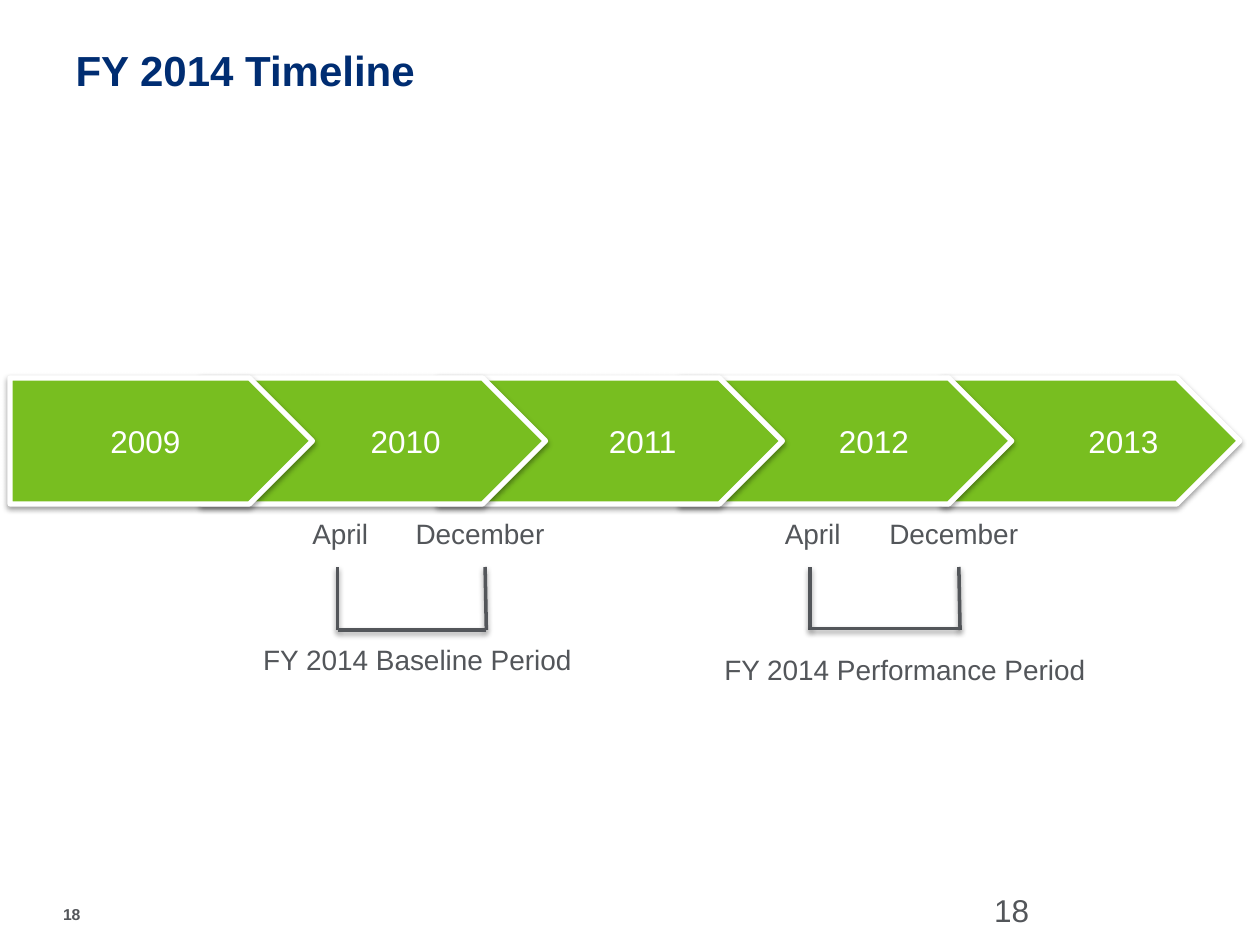
import pptx
import pptx.util
import pptx.dml.color
import pptx.enum.shapes
import pptx.enum.text
import pptx.oxml
import pptx.oxml.ns
from pptx.util import Inches

COLORS = {"green": "78BE20", "gray": "53565A", "navy": "002D72", "white": "FFFFFF"}
FONT = "Arial"
SHADOW = (
    '<a:effectLst %s><a:outerShdw blurRad="40000" dist="20000" dir="5400000" rotWithShape="0">'
    '<a:srgbClr val="000000"><a:alpha val="38000"/></a:srgbClr>'
    "</a:outerShdw></a:effectLst>" % pptx.oxml.ns.nsdecls("a")
)


def rgb(name):
    return pptx.dml.color.RGBColor.from_string(COLORS[name])


def format_text(tf, text, size, color, bold=False):
    tf.text = text
    font = tf.paragraphs[0].runs[0].font
    font.name = FONT
    font.size = pptx.util.Pt(size)
    font.bold = bold
    font.color.rgb = rgb(color)


def add_shadow(sp):
    sp.element.spPr.append(pptx.oxml.parse_xml(SHADOW))


def set_title(s, text):
    sp = s.shapes.title
    sp.left, sp.top, sp.width, sp.height = Inches(0.5), Inches(0.3), Inches(9), Inches(1.25)
    tf = sp.text_frame
    tf.vertical_anchor = pptx.enum.text.MSO_ANCHOR.TOP
    format_text(tf, text, 24, "navy", True)
    tf.paragraphs[0].alignment = pptx.enum.text.PP_ALIGN.LEFT


def add_text(s, text, left, top, width, height, size=16, bold=False, wrap=False):
    sp = s.shapes.add_textbox(Inches(left), Inches(top), Inches(width), Inches(height))
    tf = sp.text_frame
    tf.word_wrap = wrap
    format_text(tf, text, size, "gray", bold)
    return tf


def add_year(s, year, left, width, indent):
    sp = s.shapes.add_shape(
        pptx.enum.shapes.MSO_SHAPE.PENTAGON, Inches(left), Inches(3), Inches(width), Inches(1)
    )
    sp.fill.solid()
    sp.fill.fore_color.rgb = rgb("green")
    sp.line.color.rgb = rgb("white")
    sp.line.width = pptx.util.Pt(3)
    add_shadow(sp)
    tf = sp.text_frame
    tf.margin_left = Inches(0.1 + indent)
    tf.vertical_anchor = pptx.enum.text.MSO_ANCHOR.MIDDLE
    format_text(tf, year, 18, "white")
    tf.paragraphs[0].alignment = pptx.enum.text.PP_ALIGN.CENTER


def add_line(s, x1, y1, x2, y2):
    line = s.shapes.add_connector(
        pptx.enum.shapes.MSO_CONNECTOR.STRAIGHT, Inches(x1), Inches(y1), Inches(x2), Inches(y2)
    )
    line.line.color.rgb = rgb("gray")
    line.line.width = pptx.util.Pt(2)
    add_shadow(line)


def add_period(s, label, label_left, label_top, label_width, left, right, base):
    add_line(s, left, 4.5, left, 5)
    add_line(s, right - 0.01, 4.5, right, 5)
    add_line(s, left, base, right, base)
    add_text(s, "April", left - 0.3, 4.05, 0.65, 0.37)
    add_text(s, "December", right - 0.66, 4.05, 1.24, 0.37)
    add_text(s, label, label_left, label_top, label_width, 0.37)


def add_page_numbers(s, number):
    tf = add_text(s, number, 0.5, 7.18, 0.32, 0.25, 9, True, True)
    tf.margin_left = tf.margin_top = tf.margin_right = tf.margin_bottom = 0
    tf = add_text(s, number, 7.58, 7.02, 2.33, 0.4, 18, wrap=True)
    tf.margin_left = Inches(0.31)


def main():
    prs = pptx.Presentation()
    prs.slide_width, prs.slide_height = Inches(10), Inches(7.5)
    s = prs.slides.add_slide(prs.slide_layouts[5])
    set_title(s, "FY 2014 Timeline")
    add_page_numbers(s, "18")
    for year, left, width, indent in [
        ("2013", 7.48, 2.36, 0.76),
        ("2012", 5.4, 2.63, 0.69),
        ("2011", 3.48, 2.73, 0.76),
        ("2010", 1.6, 2.73, 0.76),
        ("2009", 0.08, 2.4, 0),
    ]:
        add_year(s, year, left, width, indent)
    add_period(s, "FY 2014 Performance Period", 5.65, 5.13, 3.1, 6.43, 7.62, 4.99)
    add_period(s, "FY 2014 Baseline Period", 1.99, 5.05, 2.68, 2.68, 3.86, 5)
    prs.save("out.pptx")


if __name__ == "__main__":
    main()
